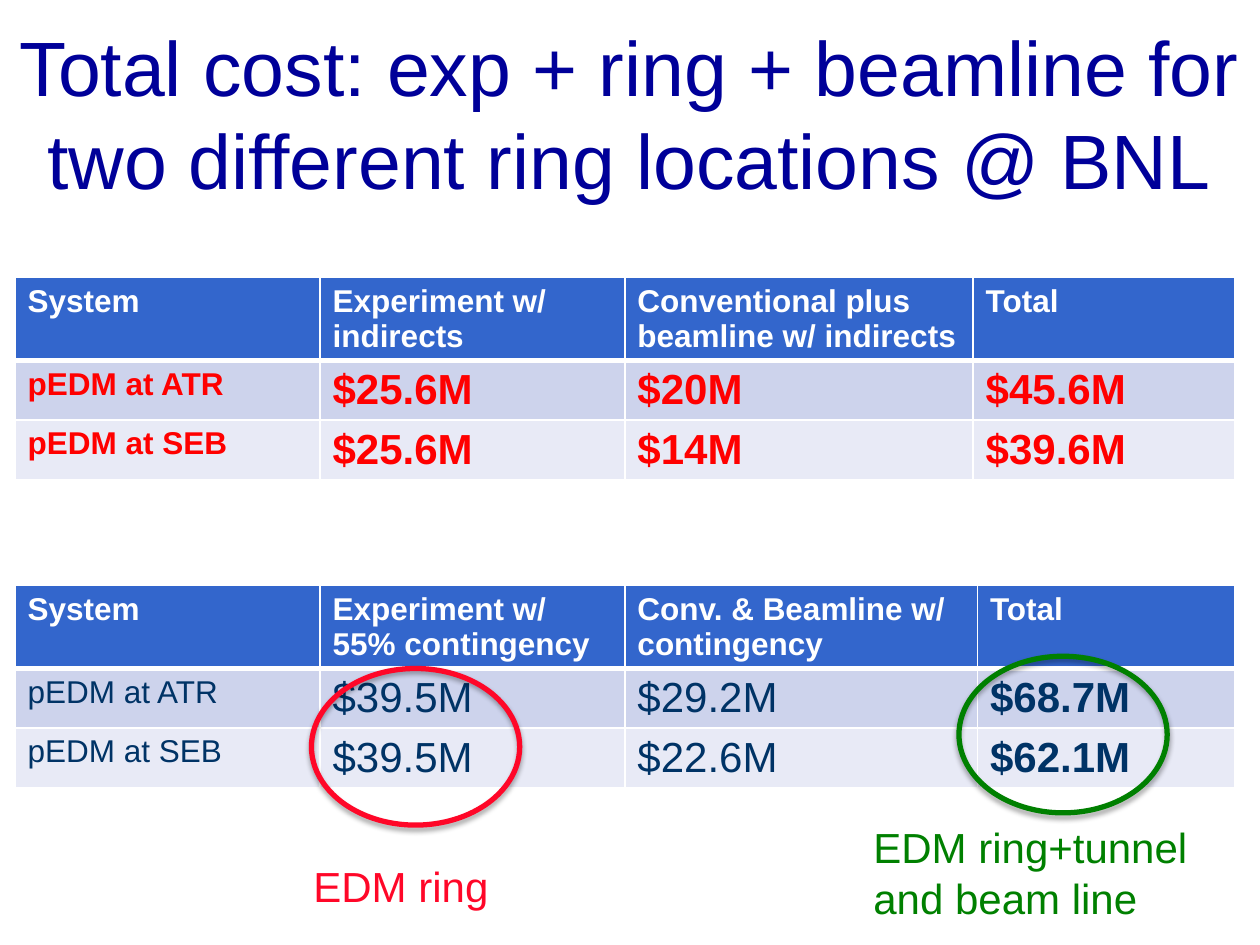
from lxml.etree import SubElement
from pptx import Presentation
from pptx.dml.color import RGBColor
from pptx.enum.shapes import MSO_SHAPE
from pptx.enum.text import MSO_ANCHOR, MSO_AUTO_SIZE, PP_ALIGN
from pptx.oxml.ns import qn
from pptx.util import Pt

COLORS = {
    "title": "000099",
    "header": "3366CC",
    "odd_row": "CDD3EC",
    "even_row": "E8EAF6",
    "white": "FFFFFF",
    "red": "FF0000",
    "navy": "003366",
    "ring": "FF0728",
    "green": "008000",
    "shadow": "000000",
}
ROW_FILLS = ["header", "odd_row", "even_row"]


def color(name):
    return RGBColor.from_string(COLORS[name])


def format_font(font, color_name, **values):
    for name, value in {"name": "Arial", **values}.items():
        setattr(font, name, value)
    font.color.rgb = color(color_name)


def place(shape, left, top, width, height):
    box = {"left": left, "top": top, "width": width, "height": height}
    for name, value in box.items():
        setattr(shape, name, Pt(value))


def add_color(parent, name):
    fill = SubElement(parent, qn("a:solidFill"))
    return SubElement(fill, qn("a:srgbClr"), val=COLORS[name])


def add_title(slide, text):
    title = slide.shapes.title
    place(title, 0, 0, 720, 128)
    frame = title.text_frame
    frame.text = text
    frame.auto_size = MSO_AUTO_SIZE.NONE
    frame.vertical_anchor = MSO_ANCHOR.MIDDLE
    paragraph = frame.paragraphs[0]
    paragraph.alignment = PP_ALIGN.CENTER
    format_font(paragraph.font, "title", size=Pt(44))


def set_borders(cell, row_index):
    """White rules, with a heavier one under the header row."""
    widths = {
        "lnL": 1,
        "lnR": 1,
        "lnT": 3 if row_index == 1 else 1,
        "lnB": 3 if row_index == 0 else 1,
    }
    properties = cell._tc.get_or_add_tcPr()
    for position, (side, width) in enumerate(widths.items()):
        line = SubElement(properties, qn(f"a:{side}"), w=str(Pt(width)))
        add_color(line, "white")
        properties.insert(position, line)


def add_cost_table(slide, top, widths, rows, body_color, bold_columns):
    graphic_frame = slide.shapes.add_table(
        len(rows), len(widths), Pt(8.64), Pt(top), Pt(sum(widths)), Pt(122.4))
    table = graphic_frame.table
    for column, width in zip(table.columns, widths):
        column.width = Pt(width)
    for row_index, texts in enumerate(rows):
        table.rows[row_index].height = Pt(33)
        is_header = row_index == 0
        for column_index, text in enumerate(texts):
            cell = table.cell(row_index, column_index)
            cell.text = text
            cell.fill.solid()
            cell.fill.fore_color.rgb = color(ROW_FILLS[row_index])
            set_borders(cell, row_index)
            format_font(
                cell.text_frame.paragraphs[0].font,
                "white" if is_header else body_color,
                size=Pt(18 if is_header or column_index == 0 else 24),
                bold=is_header or column_index in bold_columns)


def add_soft_shadow(shape):
    shape.shadow.inherit = False
    effects = shape._element.spPr.find(qn("a:effectLst"))
    shadow = SubElement(
        effects, qn("a:outerShdw"), blurRad=str(Pt(3.1)), dist=str(Pt(1.8)),
        dir="5400000", rotWithShape="0")
    shade = SubElement(shadow, qn("a:srgbClr"), val=COLORS["shadow"])
    SubElement(shade, qn("a:alpha"), val="35000")


def add_callout(slide, color_name, ellipse_box, label_box, lines):
    """An ellipse around table values, grouped with its label."""
    group = slide.shapes.add_group_shape()
    ellipse = group.shapes.add_shape(
        MSO_SHAPE.OVAL, *(Pt(value) for value in ellipse_box))
    ellipse.fill.background()
    ellipse.line.color.rgb = color(color_name)
    ellipse.line.width = Pt(3)
    add_soft_shadow(ellipse)

    label = group.shapes.add_textbox(*(Pt(value) for value in label_box))
    frame = label.text_frame
    frame.word_wrap = False
    frame.auto_size = MSO_AUTO_SIZE.SHAPE_TO_FIT_TEXT
    frame.text = "\n".join(lines)
    for paragraph in frame.paragraphs:
        format_font(paragraph.font, color_name, size=Pt(24))


def main():
    presentation = Presentation()
    presentation.slide_width, presentation.slide_height = Pt(720), Pt(540)
    slide = presentation.slides.add_slide(presentation.slide_layouts[5])

    add_title(slide, "Total cost: exp + ring + beamline for "
                     "two different ring locations @ BNL")

    # Costs with indirects
    add_cost_table(slide, 158.5, [174.24, 174.24, 199, 149.5], [
        ["System", "Experiment w/ indirects",
         "Conventional plus beamline w/ indirects", "Total"],
        ["pEDM at ATR", "$25.6M", "$20M", "$45.6M"],
        ["pEDM at SEB", "$25.6M", "$14M", "$39.6M"],
    ], "red", {0, 1, 2, 3})

    # Costs with contingency
    add_cost_table(slide, 334.5, [174.24, 174.24, 201.5, 147], [
        ["System", "Experiment w/ 55% contingency",
         "Conv. & Beamline w/ contingency", "Total"],
        ["pEDM at ATR", "$39.5M", "$29.2M", "$68.7M"],
        ["pEDM at SEB", "$39.5M", "$22.6M", "$62.1M"],
    ], "navy", {3})

    # Callouts on the second table
    add_callout(slide, "ring", (178, 382, 119, 89.5),
                (172, 488, 115, 36), ["EDM ring"])
    add_callout(slide, "green", (548, 375, 119, 89.5),
                (492, 466, 196, 65.5), ["EDM ring+tunnel", "and beam line"])

    presentation.save("out.pptx")


if __name__ == "__main__":
    main()
